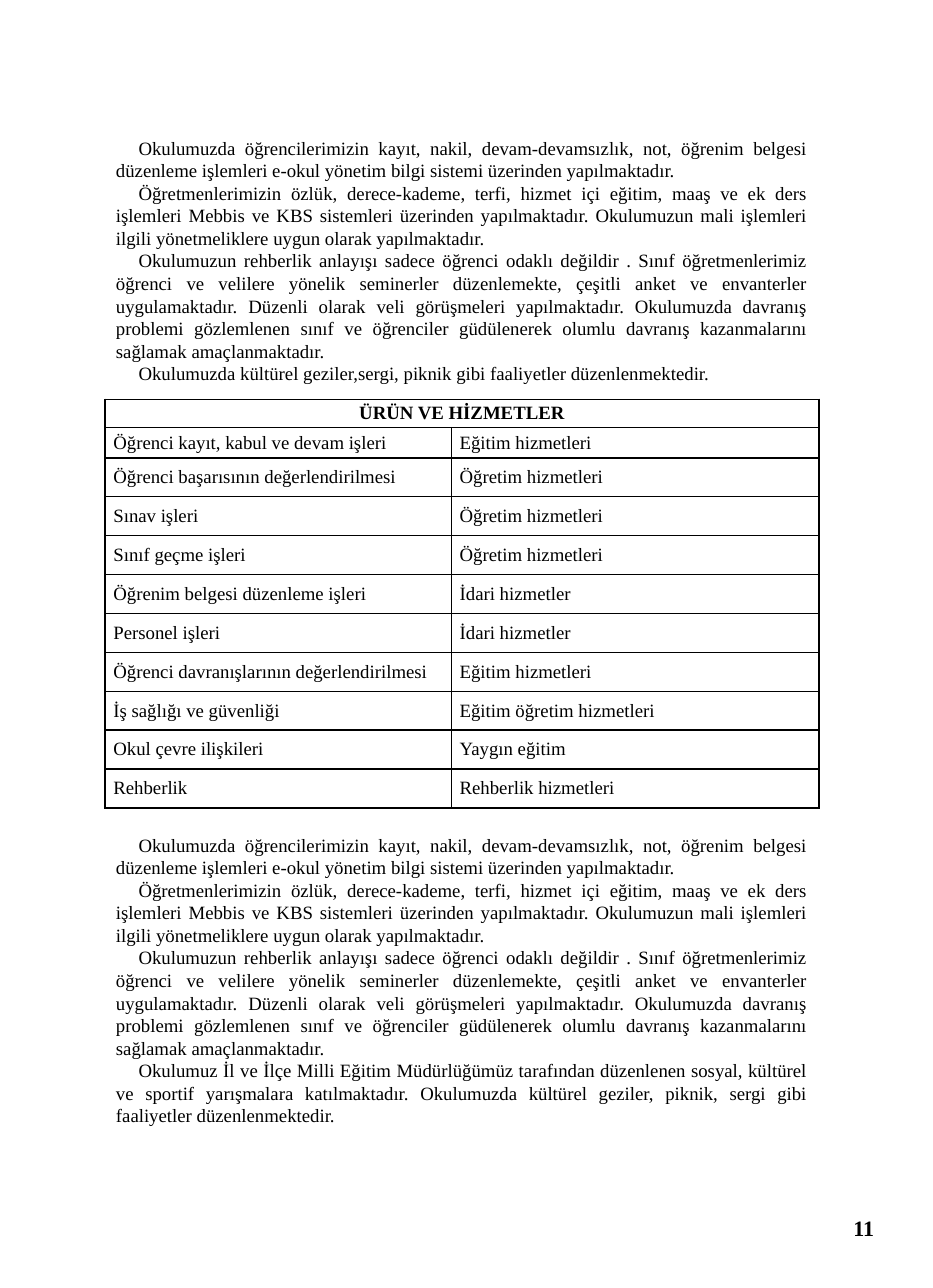
from dataclasses import dataclass

from lxml.etree import SubElement
from pptx import Presentation
from pptx.dml.color import RGBColor
from pptx.enum.text import MSO_ANCHOR, MSO_AUTO_SIZE, PP_ALIGN
from pptx.oxml.ns import qn
from pptx.slide import Slide
from pptx.table import _Cell
from pptx.text.text import TextFrame
from pptx.util import Emu, Pt

PX = 4572
FONT = "Times New Roman"
BLACK = RGBColor(0, 0, 0)
WHITE = RGBColor(255, 255, 255)
CONTENT_LEFT = 186
COLUMN_WIDTHS = (614, 652)
CONTENT_WIDTH = sum(COLUMN_WIDTHS)
TABLE_TOP = 708
HEADER_HEIGHT = 50
FIRST_ROW_HEIGHT = 54
ROW_HEIGHT = 69


@dataclass(frozen=True)
class Service:
    product: str
    service: str
    product_align: PP_ALIGN = PP_ALIGN.JUSTIFY


@dataclass(frozen=True)
class TextBlock:
    left: int
    top: int
    width: int
    height: int
    paragraphs: tuple[str, ...]
    size: int = 12
    bold: bool = False
    align: PP_ALIGN = PP_ALIGN.JUSTIFY
    indent: int = 40
    inset: tuple[int, int] = (20, 10)
    anchor: MSO_ANCHOR = MSO_ANCHOR.TOP
    auto_size: MSO_AUTO_SIZE = MSO_AUTO_SIZE.SHAPE_TO_FIT_TEXT


SERVICES = (
    Service("Öğrenci kayıt, kabul ve devam işleri", "Eğitim hizmetleri"),
    Service("Öğrenci başarısının değerlendirilmesi", "Öğretim hizmetleri"),
    Service("Sınav işleri", "Öğretim hizmetleri"),
    Service("Sınıf geçme işleri", "Öğretim hizmetleri"),
    Service("Öğrenim belgesi düzenleme işleri", "İdari hizmetler"),
    Service("Personel işleri", "İdari hizmetler"),
    Service("Öğrenci davranışlarının değerlendirilmesi", "Eğitim hizmetleri", PP_ALIGN.LEFT),
    Service("İş sağlığı ve güvenliği", "Eğitim öğretim hizmetleri"),
    Service("Okul çevre ilişkileri", "Yaygın eğitim"),
    Service("Rehberlik", "Rehberlik hizmetleri"),
)

SHARED_PARAGRAPHS = (
    "Okulumuzda öğrencilerimizin kayıt, nakil, devam-devamsızlık, not, öğrenim belgesi "
    "düzenleme işlemleri e-okul yönetim bilgi sistemi üzerinden yapılmaktadır.",
    "Öğretmenlerimizin özlük, derece-kademe, terfi, hizmet içi eğitim, maaş ve ek ders "
    "işlemleri Mebbis ve KBS sistemleri üzerinden yapılmaktadır. Okulumuzun mali işlemleri "
    "ilgili yönetmeliklere uygun olarak yapılmaktadır.",
    "Okulumuzun rehberlik anlayışı sadece öğrenci odaklı değildir . Sınıf öğretmenlerimiz "
    "öğrenci ve velilere yönelik seminerler düzenlemekte, çeşitli anket ve envanterler "
    "uygulamaktadır. Düzenli olarak veli görüşmeleri yapılmaktadır. Okulumuzda davranış "
    "problemi gözlemlenen sınıf ve öğrenciler güdülenerek olumlu davranış kazanmalarını "
    "sağlamak amaçlanmaktadır.",
)
TRIPS = "Okulumuzda kültürel geziler,sergi, piknik gibi faaliyetler düzenlenmektedir."
COMPETITIONS = (
    "Okulumuz İl ve İlçe Milli Eğitim Müdürlüğümüz tarafından düzenlenen sosyal, kültürel "
    "ve sportif yarışmalara katılmaktadır. Okulumuzda kültürel geziler, piknik, sergi gibi "
    "faaliyetler düzenlenmektedir."
)

TEXT_BLOCKS = (
    TextBlock(CONTENT_LEFT, 1468, CONTENT_WIDTH, 546, (*SHARED_PARAGRAPHS, COMPETITIONS)),
    TextBlock(
        1186, 2116, 386, 122, ("11",), size=14, bold=True, align=PP_ALIGN.RIGHT,
        indent=0, inset=(22, 12), anchor=MSO_ANCHOR.MIDDLE, auto_size=MSO_AUTO_SIZE.NONE,
    ),
    TextBlock(CONTENT_LEFT, 232, CONTENT_WIDTH, 464, (*SHARED_PARAGRAPHS, TRIPS)),
)


def px(length: int) -> Emu:
    return Emu(length * PX)


def write_text(
    frame: TextFrame,
    texts: tuple[str, ...],
    *,
    size: int = 12,
    bold: bool = False,
    align: PP_ALIGN = PP_ALIGN.JUSTIFY,
    indent: int = 0,
) -> None:
    for index, text in enumerate(texts):
        paragraph = frame.add_paragraph() if index else frame.paragraphs[0]
        paragraph.alignment = align
        if indent:
            properties = paragraph._p.get_or_add_pPr()
            properties.set("marL", "0")
            properties.set("indent", str(px(indent)))
        run = paragraph.add_run()
        run.text = text
        run.font.name = FONT
        run.font.size = Pt(size)
        run.font.bold = bold
        run.font.color.rgb = BLACK


def add_text_block(slide: Slide, block: TextBlock) -> None:
    shape = slide.shapes.add_textbox(
        px(block.left), px(block.top), px(block.width), px(block.height)
    )
    frame = shape.text_frame
    frame.word_wrap = True
    frame.auto_size = block.auto_size
    frame.vertical_anchor = block.anchor
    horizontal, vertical = block.inset
    frame.margin_left = frame.margin_right = px(horizontal)
    frame.margin_top = frame.margin_bottom = px(vertical)
    write_text(
        frame, block.paragraphs, size=block.size, bold=block.bold,
        align=block.align, indent=block.indent,
    )


def style_cell(cell: _Cell) -> None:
    cell.vertical_anchor = MSO_ANCHOR.MIDDLE
    cell.margin_left = cell.margin_right = px(15)
    cell.margin_top = cell.margin_bottom = 0
    properties = cell._tc.get_or_add_tcPr()
    for side in ("lnL", "lnR", "lnT", "lnB"):
        line = SubElement(properties, qn(f"a:{side}"), w=str(Pt(1)))
        fill = SubElement(line, qn("a:solidFill"))
        SubElement(fill, qn("a:srgbClr"), val=str(BLACK))
    cell.fill.background()


def add_services_table(slide: Slide) -> None:
    heights = (HEADER_HEIGHT, FIRST_ROW_HEIGHT, *[ROW_HEIGHT] * (len(SERVICES) - 1))
    table = slide.shapes.add_table(
        len(heights), len(COLUMN_WIDTHS),
        px(CONTENT_LEFT), px(TABLE_TOP), px(CONTENT_WIDTH), px(sum(heights)),
    ).table
    table.first_row = False
    table.horz_banding = False
    for column, width in zip(table.columns, COLUMN_WIDTHS):
        column.width = px(width)
    for row, height in zip(table.rows, heights):
        row.height = px(height)
    for cell in table.iter_cells():
        style_cell(cell)
    header = table.cell(0, 0)
    header.merge(table.cell(0, 1))
    write_text(header.text_frame, ("ÜRÜN VE HİZMETLER",), bold=True, align=PP_ALIGN.CENTER)
    for index, entry in enumerate(SERVICES, start=1):
        write_text(table.cell(index, 0).text_frame, (entry.product,), align=entry.product_align)
        write_text(table.cell(index, 1).text_frame, (entry.service,))


def main() -> None:
    presentation = Presentation()
    presentation.slide_width = px(1654)
    presentation.slide_height = px(2284)
    slide = presentation.slides.add_slide(presentation.slide_layouts[6])
    slide.background.fill.solid()
    slide.background.fill.fore_color.rgb = WHITE
    add_services_table(slide)
    for block in TEXT_BLOCKS:
        add_text_block(slide, block)
    presentation.save("out.pptx")


if __name__ == "__main__":
    main()
